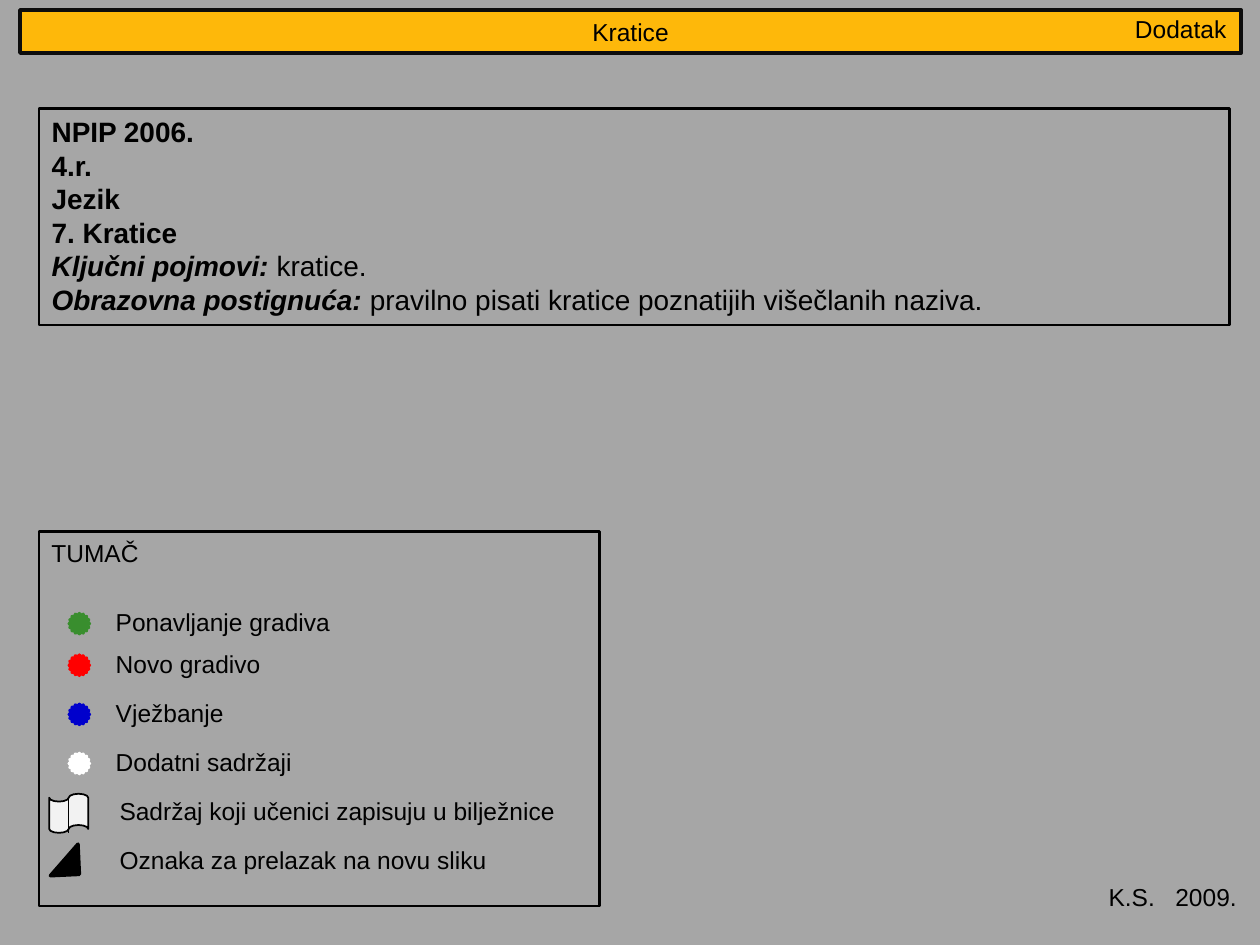
from dataclasses import dataclass

from lxml.etree import SubElement
from pptx import Presentation
from pptx.dml.color import RGBColor
from pptx.enum.shapes import MSO_CONNECTOR as Connector, MSO_SHAPE as Shape
from pptx.enum.text import MSO_ANCHOR as Anchor, MSO_AUTO_SIZE as AutoSize, PP_ALIGN as Align
from pptx.oxml.ns import qn
from pptx.util import Inches, Pt


@dataclass(frozen=True)
class Theme:
    font: str = "Arial"
    small: int = 14
    large: int = 16
    ink: str = "000000"
    page: str = "A6A6A6"
    bar: str = "FEB80A"
    bar_line: str = "0D0D0D"
    paper: str = "F2F2F2"
    review: str = "398E2E"
    new: str = "FF0000"
    practice: str = "0000CC"
    extra: str = "FFFFFF"


THEME = Theme()
COLUMNS, ROWS = 100, 75  # square grid over the page
CELL = Inches(0.1)


@dataclass(frozen=True)
class Box:
    """A region measured in grid columns and rows."""
    x: float
    y: float
    w: float
    h: float

    def inner(self, x, y, w, h):
        return Box(self.x + x, self.y + y, w, h)

    def lengths(self):
        return [round(n * CELL) for n in (self.x, self.y, self.w, self.h)]


def place(item, box):
    item.left, item.top, item.width, item.height = box.lengths()


def paint(item, fill=None, line=None, width=1.5):
    if fill:
        item.fill.solid()
        item.fill.fore_color.rgb = RGBColor.from_string(fill)
    else:
        item.fill.background()
    item.line.color.rgb = RGBColor.from_string(line or THEME.ink)
    item.line.width = Pt(width)


def add_span(para, text, size=THEME.small, bold=False, italic=False, color=THEME.ink):
    span = para.add_run()
    span.text = text
    font = span.font
    font.name, font.size, font.bold, font.italic = THEME.font, Pt(size), bold, italic
    font.color.rgb = RGBColor.from_string(color)


def add_label(page, box, text, wrap=False, **style):
    label = page.shapes.add_textbox(*box.lengths())
    frame = label.text_frame
    frame.word_wrap = wrap
    frame.auto_size = AutoSize.SHAPE_TO_FIT_TEXT
    add_span(frame.paragraphs[0], text, **style)


def add_mark(page, box, kind, fill=None, line=None, width=2, turn=0):
    mark = page.shapes.add_shape(kind, *box.lengths())
    mark.shadow.inherit = False
    mark.rotation = turn
    paint(mark, fill, line, width)


def add_header(page, box):
    # Title bar
    title = page.shapes.title
    place(title, box)
    paint(title, THEME.bar, THEME.bar_line, 2.25)
    frame = title.text_frame
    frame.auto_size = AutoSize.NONE
    frame.vertical_anchor = Anchor.MIDDLE
    frame.paragraphs[0].alignment = Align.CENTER
    add_span(frame.paragraphs[0], "Kratice")
    # Corner label
    add_label(page, box.inner(87.5, -0.2, 9.3, 3.4), "Dodatak")


def add_curriculum(page, box):
    body = page.placeholders[1]
    place(body, box)
    paint(body)
    frame = body.text_frame
    frame.auto_size = AutoSize.NONE
    lines = [
        ("NPIP 2006.", "", ""),
        ("4.r.", "", ""),
        ("Jezik", "", ""),
        ("7. Kratice", "", ""),
        ("", "Ključni pojmovi: ", "kratice."),
        ("", "Obrazovna postignuća: ", "pravilno pisati kratice poznatijih višečlanih naziva."),
    ]
    for index, (heading, term, text) in enumerate(lines):
        para = frame.add_paragraph() if index else frame.paragraphs[0]
        para.space_before = Pt(0)
        props = para._p.get_or_add_pPr()
        props.set("marL", "0")
        props.set("indent", "0")
        SubElement(props, qn("a:buNone"))
        if heading:
            add_span(para, heading, size=THEME.large, bold=True)
        else:
            add_span(para, term, size=THEME.large, bold=True, italic=True)
            add_span(para, text, size=THEME.large)


def add_notebook(page, box):
    add_mark(page, box, Shape.FLOWCHART_PUNCHED_TAPE, THEME.paper, THEME.ink, 1)
    left, top, width, height = box.lengths()
    middle = left + width // 2
    fold = page.shapes.add_connector(
        Connector.STRAIGHT, middle, top + height, middle, top + height // 10)
    fold.line.color.rgb = RGBColor.from_string(THEME.ink)
    fold.line.width = Pt(0.75)
    SubElement(fold._element.spPr, qn("a:effectLst"))


def add_legend(page, box):
    add_mark(page, box, Shape.RECTANGLE, width=1.5)
    add_label(page, box.inner(0, 0, 11.7, 3.4), "TUMAČ", wrap=True)
    # Rows are evenly spaced after the first
    first, second, pitch = 5.5, 8.8, 3.9
    tops = [first] + [second + pitch * step for step in range(5)]
    # Coloured dots
    dots = [
        ("Ponavljanje gradiva", THEME.review, 19.1),
        ("Novo gradivo", THEME.new, 14.1),
        ("Vježbanje", THEME.practice, 11.2),
        ("Dodatni sadržaji", THEME.extra, 16.1),
    ]
    for top, (text, color, width) in zip(tops, dots):
        add_mark(page, box.inner(2.4, top + 1, 1.6, 1.6), Shape.STAR_16_POINT, color, color)
        add_label(page, box.inner(5.1, top, width, 3.4), text)
    # Notebook and next-slide signs
    add_notebook(page, box.inner(0.8, tops[4] + 0.3, 3.1, 3.1))
    add_mark(page, box.inner(0.8, tops[5] + 0.5, 2.4, 2.3), Shape.RIGHT_TRIANGLE,
             THEME.ink, THEME.ink, turn=267.4)
    signs = ["Sadržaj koji učenici zapisuju u bilježnice", "Oznaka za prelazak na novu sliku"]
    for top, text in zip(tops[4:], signs):
        add_label(page, box.inner(5.4, top, 36.8, 3.4), text, wrap=True)


def main():
    deck = Presentation()
    deck.slide_width, deck.slide_height = COLUMNS * CELL, ROWS * CELL
    page = deck.slides.add_slide(deck.slide_layouts[1])
    page.background.fill.solid()
    page.background.fill.fore_color.rgb = RGBColor.from_string(THEME.page)

    add_header(page, Box(1.6, 0.8, 96.9, 3.4))
    add_curriculum(page, Box(3.1, 8.6, 94.5, 17.2))
    add_legend(page, Box(3.1, 42.2, 44.5, 29.7))
    # Author and year
    add_label(page, Box(87, 69.5, 12.3, 3.4), "K.S.   2009.")
    deck.save("out.pptx")


if __name__ == "__main__":
    main()
